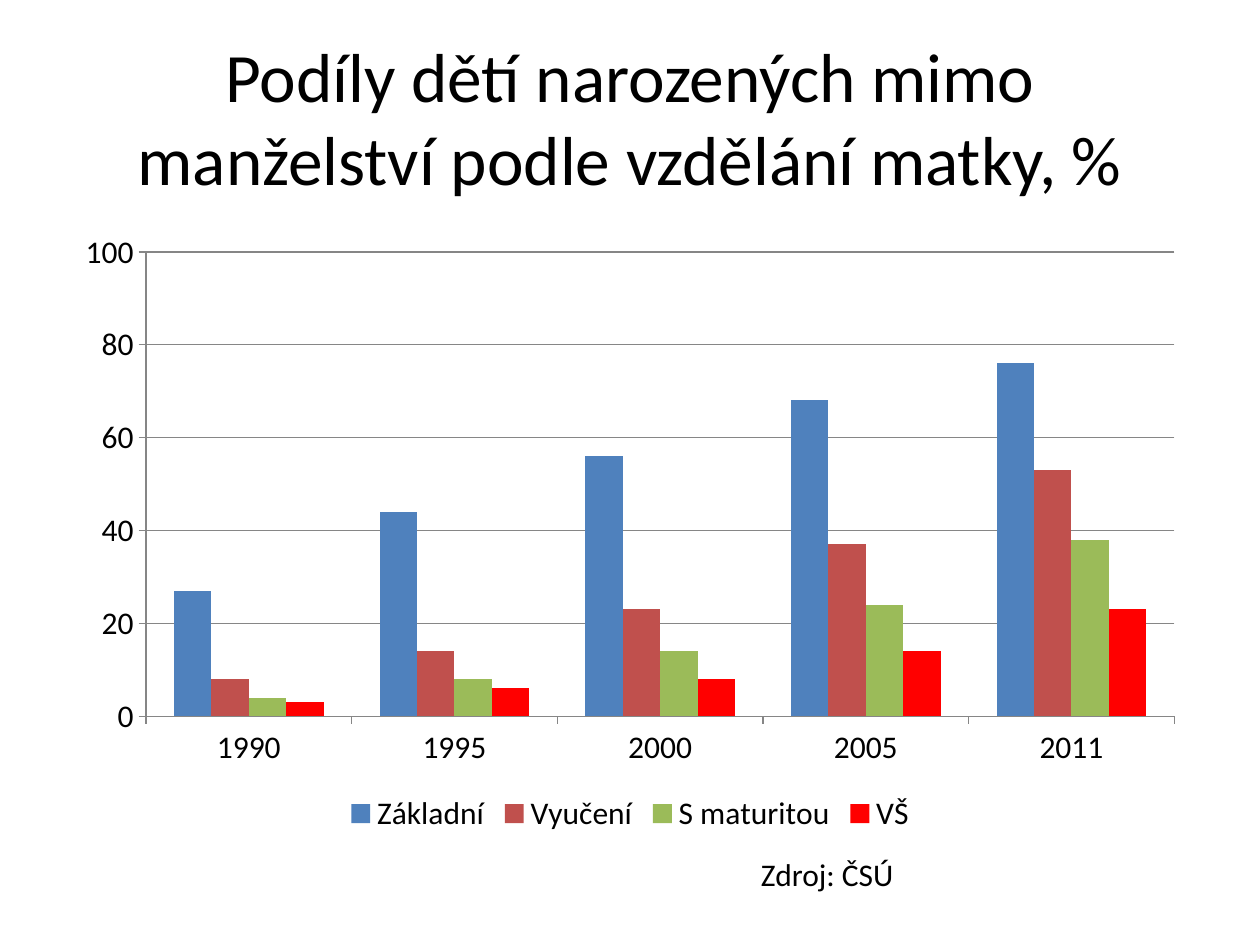
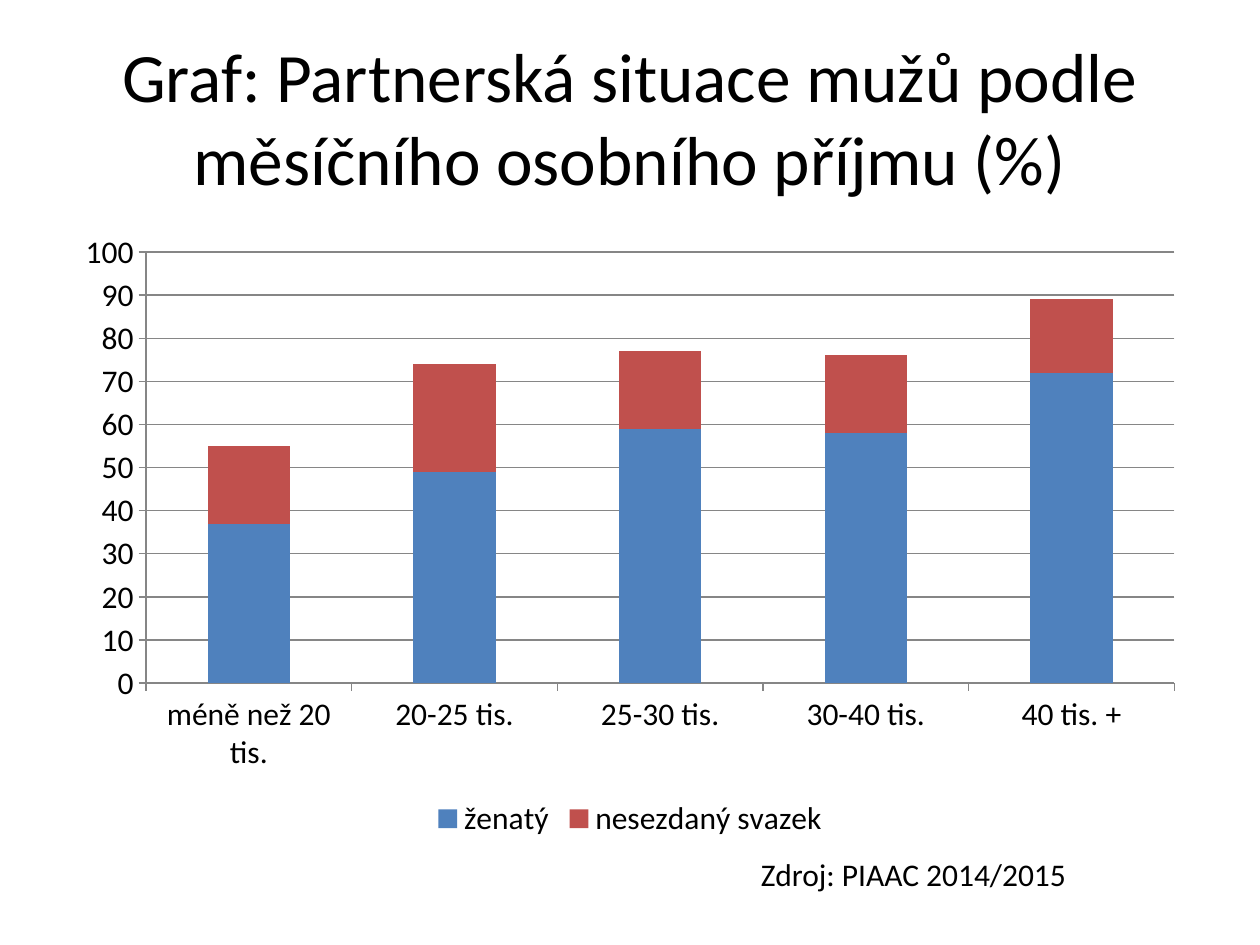
import pptx
import pptx.chart.data
import pptx.dml.color
import pptx.enum.chart
import pptx.enum.text
import pptx.util

Inches = pptx.util.Inches
Pt = pptx.util.Pt
ChartType = pptx.enum.chart.XL_CHART_TYPE
Align = pptx.enum.text.PP_ALIGN
Anchor = pptx.enum.text.MSO_ANCHOR

FONT = "Calibri"
TEXT, AXIS = "000000", "868686"
BLUE, RED, GREEN, BRIGHT_RED = "4F81BD", "C0504D", "9BBB59", "FF0000"

TITLE_BOX = (0.5, 0.3, 9, 1.25)
SOURCE_BOX = (5.94, 6.74, 3.15, 0.4)
TITLE_SIZE, BODY_SIZE = 39.6, 18

SLIDES = [
    {
        "title": "Podíly dětí narozených mimo manželství podle vzdělání matky, %",
        "source": "Zdroj: ČSÚ",
        "kind": ChartType.COLUMN_CLUSTERED,
        "height": 4.91,
        "overlap": 0,
        "step": 20,
        "categories": ["1990", "1995", "2000", "2005", "2011"],
        "series": [
            ("Základní", BLUE, (27, 44, 56, 68, 76)),
            ("Vyučení", RED, (8, 14, 23, 37, 53)),
            ("S maturitou", GREEN, (4, 8, 14, 24, 38)),
            ("VŠ", BRIGHT_RED, (3, 6, 8, 14, 23)),
        ],
    },
    {
        "title": "Graf: Partnerská situace mužů podle měsíčního osobního příjmu (%)",
        "source": "Zdroj: PIAAC 2014/2015",
        "kind": ChartType.COLUMN_STACKED,
        "height": 4.95,
        "overlap": 100,
        "step": 10,
        "categories": ["méně než 20 tis.", "20-25 tis.", "25-30 tis.", "30-40 tis.", "40 tis. +"],
        "series": [
            ("ženatý", BLUE, (37, 49, 59, 58, 72)),
            ("nesezdaný svazek", RED, (18, 25, 18, 18, 17)),
        ],
    },
]


def color(value):
    return pptx.dml.color.RGBColor.from_string(value)


def style_font(font, size):
    font.name = FONT
    font.size = Pt(size)
    font.color.rgb = color(TEXT)


def style_line(line):
    line.color.rgb = color(AXIS)
    line.width = Pt(0.75)


def add_text(slide, box, words, size, align=Align.LEFT, anchor=Anchor.TOP):
    frame = slide.shapes.add_textbox(*map(Inches, box)).text_frame
    frame.word_wrap = True
    frame.vertical_anchor = anchor
    paragraph = frame.paragraphs[0]
    paragraph.alignment = align
    run = paragraph.add_run()
    run.text = words
    style_font(run.font, size)


def add_columns(slide, content):
    figures = pptx.chart.data.CategoryChartData(number_format="General")
    figures.categories = content["categories"]
    for name, _, values in content["series"]:
        figures.add_series(name, values)
    box = map(Inches, (0.5, 1.75, 9, content["height"]))
    chart = slide.shapes.add_chart(content["kind"], *box, figures).chart
    style_font(chart.font, BODY_SIZE)
    chart.has_title = False
    chart.has_legend = True
    chart.legend.position = pptx.enum.chart.XL_LEGEND_POSITION.BOTTOM
    chart.legend.include_in_layout = False

    plot = chart.plots[0]
    plot.vary_by_categories = False
    plot.gap_width = 150
    plot.overlap = content["overlap"]
    for series, (_, fill, _) in zip(plot.series, content["series"]):
        series.format.fill.solid()
        series.format.fill.fore_color.rgb = color(fill)

    for axis in (chart.category_axis, chart.value_axis):
        axis.major_tick_mark = pptx.enum.chart.XL_TICK_MARK.OUTSIDE
        style_line(axis.format.line)
    scale = chart.value_axis
    scale.minimum_scale, scale.maximum_scale = 0, 100
    scale.major_unit = content["step"]
    scale.has_major_gridlines = True
    style_line(scale.major_gridlines.format.line)


def main():
    deck = pptx.Presentation()
    deck.slide_width, deck.slide_height = Inches(10), Inches(7.5)
    for content in SLIDES:
        slide = deck.slides.add_slide(deck.slide_layouts[6])
        add_text(slide, TITLE_BOX, content["title"], TITLE_SIZE, Align.CENTER, Anchor.MIDDLE)
        add_columns(slide, content)
        add_text(slide, SOURCE_BOX, content["source"], BODY_SIZE)
    deck.save("out.pptx")


if __name__ == "__main__":
    main()
